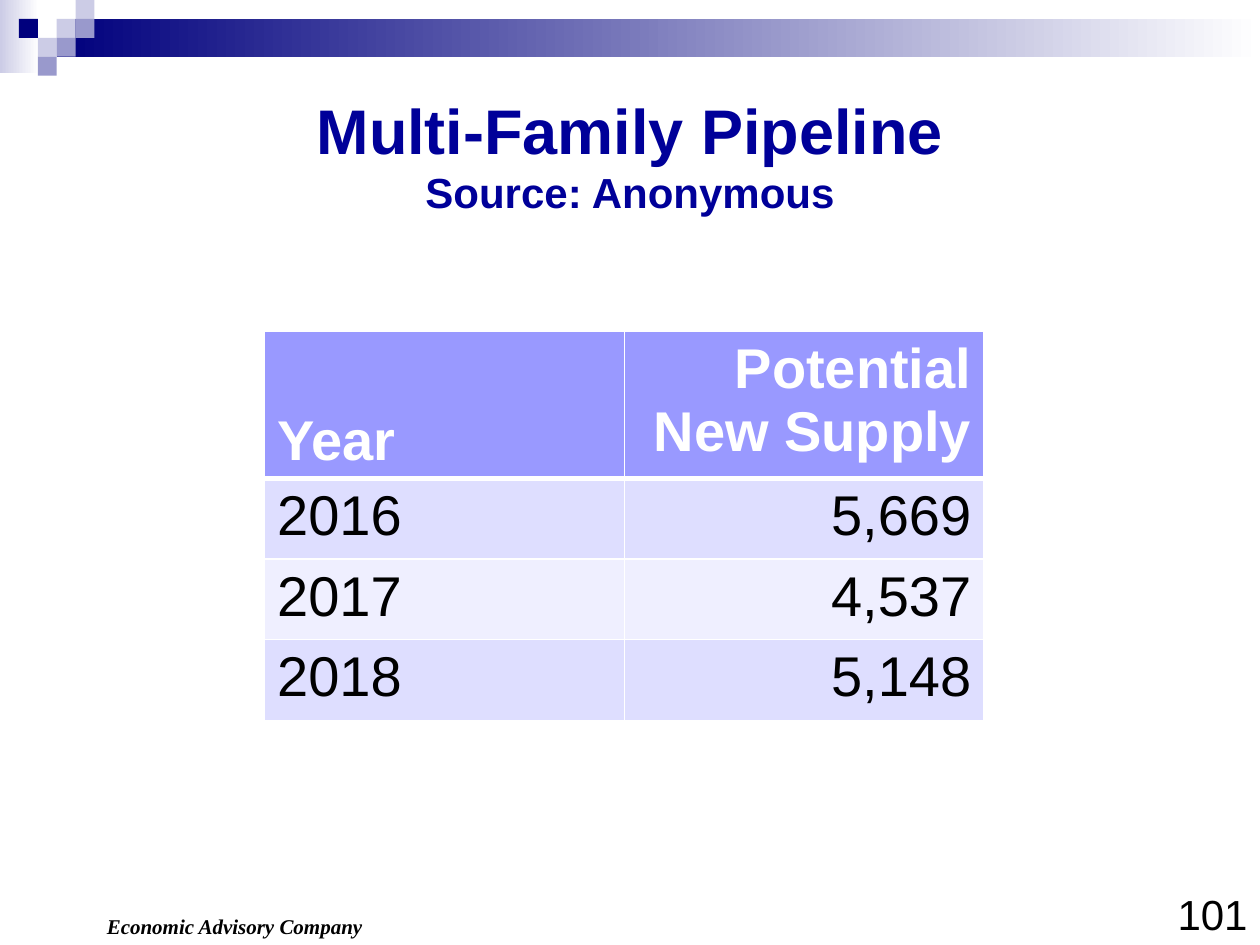
from lxml import etree
from pptx import Presentation
from pptx.dml.color import RGBColor
from pptx.enum import shapes, text
from pptx.oxml import ns
from pptx.util import Inches, Pt

WHITE, BLACK, NAVY, TITLE_BLUE = "FFFFFF", "000000", "00007D", "000099"
PALE, MID = "CCCCE6", "9999CC"


def style(run, size, color, bold=False, name="Arial"):
    run.font.size = Pt(size)
    run.font.name = name
    run.font.bold = bold
    run.font.color.rgb = RGBColor.from_string(color)


def add_block(left, top, width, height, *colors):
    """Draw a rectangle: one colour is solid, two make a left-to-right gradient."""
    block = slide.shapes.add_shape(
        shapes.MSO_SHAPE.RECTANGLE, Inches(left), Inches(top), Inches(width), Inches(height))
    block.shadow.inherit = False
    block.line.fill.background()
    if len(colors) == 1:
        block.fill.solid()
        block.fill.fore_color.rgb = RGBColor.from_string(colors[0])
    else:
        block.fill.gradient()
        block.fill.gradient_angle = 0
        for stop, color in zip(block.fill.gradient_stops, colors):
            stop.color.rgb = RGBColor.from_string(color)


presentation = Presentation()
presentation.slide_width, presentation.slide_height = Inches(10), Inches(7.5)
slide = presentation.slides.add_slide(presentation.slide_layouts[5])

# Header band and its mosaic of small squares
add_block(0, 0, 0.31, 0.58, PALE, WHITE)
add_block(0.45, 0.15, 9.55, 0.3, NAVY, WHITE)
square = 0.15
for column, row, color in [(3, 1, PALE), (4, 0, PALE), (4, 1, MID), (2, 2, PALE),
                           (1, 1, NAVY), (3, 2, MID), (2, 3, MID)]:
    add_block(column * square, row * square, square, square, color)

# Title
title = slide.shapes.title
title.left, title.top, title.width, title.height = (
    Inches(0.75), Inches(0.42), Inches(8.5), Inches(1.61))
title.text_frame.text = "Multi-Family Pipeline\vSource: Anonymous"
title.text_frame.vertical_anchor = text.MSO_ANCHOR.MIDDLE
title.text_frame.auto_size = text.MSO_AUTO_SIZE.NONE
title_paragraph = title.text_frame.paragraphs[0]
title_paragraph.alignment = text.PP_ALIGN.CENTER
for run, size in zip(title_paragraph.runs, (36, 24)):
    style(run, size, TITLE_BLUE, bold=True)

# Footer and page number
for words, left, top, width, height, size, font, is_footer in [
        ("Economic Advisory Company", 0.75, 7.2, 2.5, 0.3, 12, "Times New Roman", True),
        ("101", 9.22, 7, 0.78, 0.5, 24, "Arial", False)]:
    box = slide.shapes.add_textbox(Inches(left), Inches(top), Inches(width), Inches(height))
    box.text_frame.word_wrap = True
    box.text_frame.text = words
    paragraph = box.text_frame.paragraphs[0]
    paragraph.alignment = text.PP_ALIGN.LEFT if is_footer else text.PP_ALIGN.RIGHT
    style(paragraph.runs[0], size, BLACK, bold=is_footer, name=font)
    paragraph.runs[0].font.italic = is_footer

# Supply table
supply = [("Year", "Potential New Supply"), ("2016", "5,669"), ("2017", "4,537"), ("2018", "5,148")]
row_fills = ["9999FF", "DEDEFF", "EFEFFF", "DEDEFF"]
table = slide.shapes.add_table(
    len(supply), 2, Inches(2.1), Inches(2.63), Inches(5.71), Inches(3.07)).table
for row_index, values in enumerate(supply):
    is_header = row_index == 0
    table.rows[row_index].height = Inches(1.15 if is_header else 0.64)
    for column_index, value in enumerate(values):
        cell = table.cell(row_index, column_index)
        cell.text_frame.text = value
        paragraph = cell.text_frame.paragraphs[0]
        paragraph.alignment = text.PP_ALIGN.RIGHT if column_index else text.PP_ALIGN.LEFT
        style(paragraph.runs[0], 32, WHITE if is_header else BLACK, bold=is_header)
        if value == "Year":
            cell.vertical_anchor = text.MSO_ANCHOR.BOTTOM
        # Thick rule between the header and the first data row
        widths = {"lnL": 1, "lnR": 1, "lnT": 3 if row_index == 1 else 1, "lnB": 3 if is_header else 1}
        properties = cell._tc.get_or_add_tcPr()
        for edge, width in widths.items():
            line = etree.SubElement(properties, ns.qn(f"a:{edge}"), w=str(Pt(width)))
            line_fill = etree.SubElement(line, ns.qn("a:solidFill"))
            etree.SubElement(line_fill, ns.qn("a:srgbClr"), val=WHITE)
        cell.fill.solid()
        cell.fill.fore_color.rgb = RGBColor.from_string(row_fills[row_index])

presentation.save("out.pptx")
